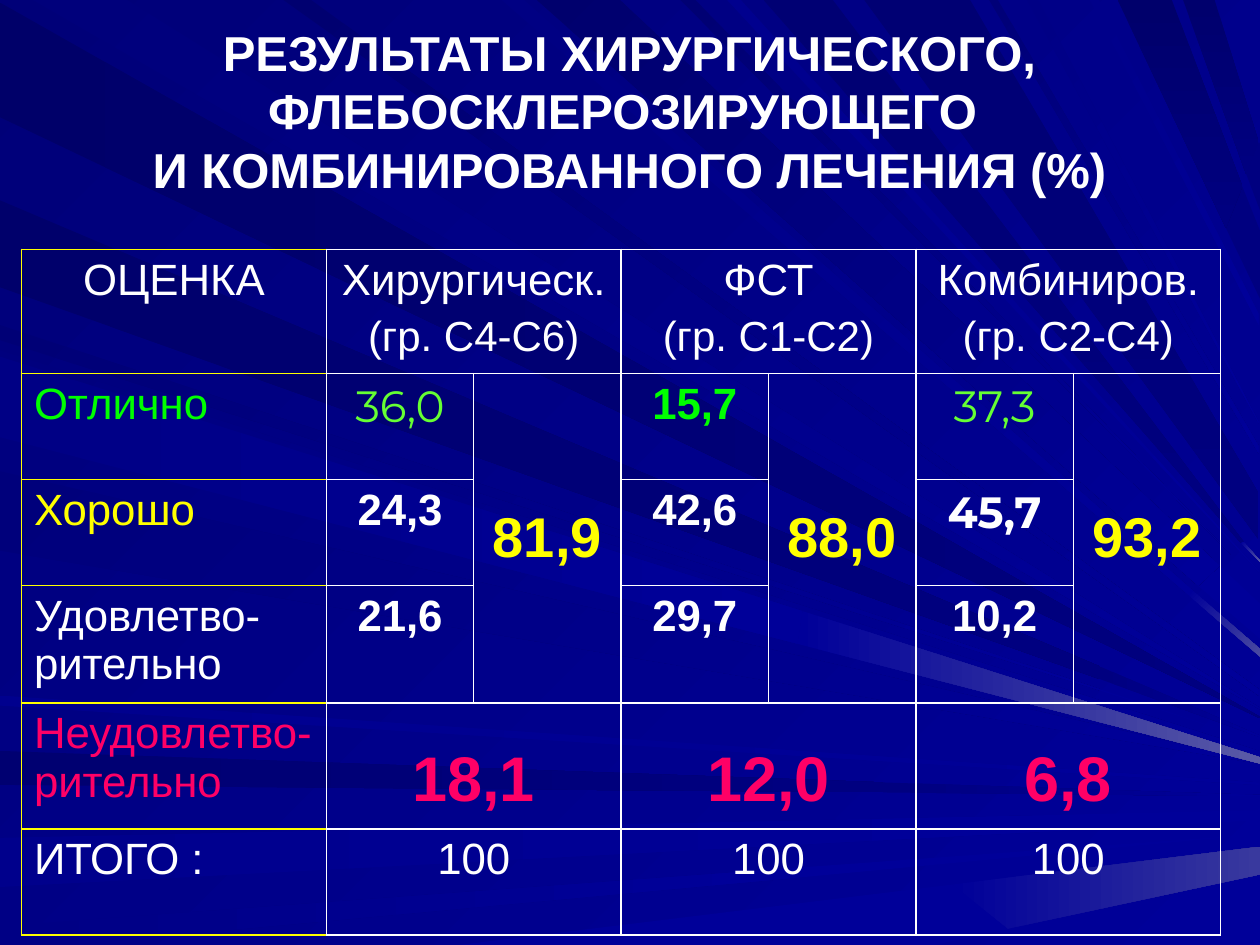
from lxml.etree import SubElement
from pptx import Presentation
from pptx.dml.color import RGBColor
from pptx.enum.text import MSO_ANCHOR, PP_ALIGN
from pptx.oxml.ns import qn
from pptx.util import Inches, Pt

WHITE = RGBColor(0xFF, 0xFF, 0xFF)
YELLOW = RGBColor(0xFF, 0xFF, 0x00)
GREEN = RGBColor(0x00, 0xFF, 0x00)
LIME = RGBColor(0x66, 0xFF, 0x33)
PINK = RGBColor(0xFF, 0x00, 0x66)
NAVY = RGBColor(0x00, 0x00, 0x78)
BLUE = RGBColor(0x00, 0x00, 0x99)

# Text formats
BASE = {"name": "Arial", "size": Pt(25), "bold": False}
BOLD = {**BASE, "bold": True}
SMALL = {**BASE, "size": Pt(24)}
THIN = {**BASE, "name": "Montserrat"}
HEAVY = {**THIN, "bold": True}
SUM = {**BOLD, "size": Pt(32)}
FAIL = {**BOLD, "size": Pt(36)}
TITLE = {**BOLD, "size": Pt(28)}

# Background rays: first colour, last colour, angle, corners in 1/100 inch
RAYS = [
    ("000069", "000080", 0, "556,317 0,2 0,93 529,345 1000,570 1000,569"),
    ("00007B", "000099", 45, "577,298 101,0 26,0 563,310 1000,563 1000,562"),
    ("000071", "000080", 0, "0,623 701,629 701,621 0,596"),
    ("000080", "000099", 0, "1000,632 1000,631 701,621 701,629"),
    ("00008C", "000099", 0, "0,704 831,660 831,647 0,665"),
    ("000099", "000099", 0, "1000,651 1000,643 831,647 831,660"),
    ("000099", "000099", 0, "1000,662 628,689 628,697"),
    ("000085", "000099", 0, "0,750 54,750 628,697 628,689 0,735"),
    ("000099", "000099", 0, "742,750 801,737 756,702 364,750"),
    ("000099", "39399E", 0, "1000,694 1000,672 756,702 800,737"),
    ("000099", "000099", 0, "1000,589 873,547 873,548"),
    ("000076", "000099", 45, "0,270 873,548 873,547 0,258"),
    ("000080", "000099", 0, "1000,585 1000,584 873,529 873,539"),
    ("00006B", "000080", 0, "0,228 873,539 873,529 0,159"),
    ("000083", "000099", 45, "398,0 944,473 947,469 416,0"),
    ("000099", "4A4AA1", 45, "1000,521 1000,515 947,469 944,473"),
    ("000099", "000099", 0, "1000,507 1000,479 968,449 951,465"),
    ("00006D", "000099", 45, "426,0 951,465 968,449 492,0"),
    ("000073", "000099", 45, "540,0 977,440 552,0"),
    ("000073", "000080", 90, "606,0 985,431 987,430 661,0"),
    ("000099", "5A5AA6", 45, "1000,446 1000,445 987,430 985,431"),
    ("000080", "000080", 0, "1000,237 1000,183 986,148 973,181"),
    ("00006B", "000080", 90, "887,0 973,181 986,148 930,0"),
    ("00006D", "000080", 90, "964,0 939,0 989,138 999,113"),
    ("000080", "000080", 0, "989,138 1000,167 1000,114 999,113"),
    ("00007E", "000099", 45, "0,342 999,602 999,596 0,278"),
    ("00007B", "000099", 45, "0,437 999,606 999,605 0,374"),
    ("00008E", "000099", 0, "0,560 999,623 999,621 0,552"),
    ("000070", "000099", 45, "225,0 999,552 999,547 247,0"),
    ("00008E", "000099", 45, "577,0 999,454 999,453 588,0"),
    ("000073", "000080", 90, "770,0 686,0 999,428 999,390 998,390"),
    ("000078", "000099", 45, "785,0 999,360 999,354 792,0"),
    ("000085", "000099", 45, "815,0 999,336 999,335 824,0"),
    ("00008A", "000099", 45, "999,249 872,0 865,0 999,258"),
    ("000085", "000099", 0, "0,283 0,347 633,511 635,498 637,485"),
    ("000099", "5A5AA6", 0, "1000,601 637,485 635,498 633,511 1000,606"),
]

COLS = [2.42, 1.17, 1.17, 1.17, 1.17, 1.25, 1.17]
ROW = 0.84
LABELS = [
    ("Отлично", GREEN),
    ("Хорошо", YELLOW),
    ("Удовлетво-рительно", WHITE),
    ("Неудовлетво-рительно", PINK),
    ("ИТОГО :", WHITE),
]
# Each group: heading, range, three grades (text, format, colour), sum, failures
GROUPS = [
    ("Хирургическ.", "(гр. С4-С6)",
     [("36,0", THIN, LIME), ("24,3", BOLD, WHITE), ("21,6", BOLD, WHITE)],
     "81,9", "18,1"),
    ("ФСТ", "(гр. С1-С2)",
     [("15,7", BOLD, GREEN), ("42,6", BOLD, WHITE), ("29,7", BOLD, WHITE)],
     "88,0", "12,0"),
    ("Комбиниров.", "(гр. С2-С4)",
     [("37,3", THIN, LIME), ("45,7", HEAVY, WHITE), ("10,2", BOLD, WHITE)],
     "93,2", "6,8"),
]


def shade(fill, first, last, angle):
    fill.gradient()
    fill.gradient_angle = -angle % 360
    for stop, color in zip(fill.gradient_stops, (first, last)):
        stop.color.rgb = color


def add_ray(slide, first, last, angle, text):
    pts = [tuple(map(int, pair.split(","))) for pair in text.split()]
    pen = slide.shapes.build_freeform(*pts[0], scale=Inches(0.01))
    pen.add_line_segments(pts[1:], close=True)
    ray = pen.convert_to_shape()
    ray.shadow.inherit = False
    ray.line.fill.background()
    if first == last:
        ray.fill.solid()
        ray.fill.fore_color.rgb = RGBColor.from_string(first)
    else:
        shade(ray.fill, RGBColor.from_string(first),
              RGBColor.from_string(last), angle)


def put(par, text, form, color, align=PP_ALIGN.CENTER):
    par.text = text
    par.alignment = align
    for run in par.runs:
        for key, value in form.items():
            setattr(run.font, key, value)
        run.font.color.rgb = color


def add_title(slide):
    box = slide.shapes.add_textbox(Inches(0.08), Inches(0.25),
                                   Inches(9.83), Inches(1.25))
    frame = box.text_frame
    frame.word_wrap = True
    frame.vertical_anchor = MSO_ANCHOR.MIDDLE
    put(frame.paragraphs[0],
        "РЕЗУЛЬТАТЫ ХИРУРГИЧЕСКОГО, ФЛЕБОСКЛЕРОЗИРУЮЩЕГО \v"
        "И КОМБИНИРОВАННОГО ЛЕЧЕНИЯ (%)", TITLE, WHITE)


def edge(cell, colors):
    props = cell._tc.get_or_add_tcPr()
    for pos, (side, color) in enumerate(colors.items()):
        line = SubElement(props, qn("a:ln" + side), w=str(Pt(1)))
        fill = SubElement(line, qn("a:solidFill"))
        SubElement(fill, qn("a:srgbClr"), val=str(color))
        props.insert(pos, line)


def add_grid(slide):
    rows = len(LABELS) + 1
    frame = slide.shapes.add_table(rows, len(COLS), Inches(0.17), Inches(1.98),
                                   Inches(sum(COLS)), Inches(rows * ROW))
    table = frame.table
    table.first_row = table.horz_banding = False
    for col, width in zip(table.columns, COLS):
        col.width = Inches(width)
    for row in table.rows:
        row.height = Inches(ROW)
        for num, cell in enumerate(row.cells):
            cell.fill.background()
            tint = WHITE if num else YELLOW
            edge(cell, {"L": tint, "R": WHITE, "T": tint, "B": tint})
    return table


def fill_grid(table):
    def first(row, col):
        return table.cell(row, col).text_frame.paragraphs[0]

    # Grade names
    put(first(0, 0), "ОЦЕНКА", BASE, WHITE)
    for row, (text, color) in enumerate(LABELS, 1):
        put(first(row, 0), text, BASE, color, PP_ALIGN.LEFT)

    # Treatment groups, two columns each
    for num, (name, span, marks, total, fail) in enumerate(GROUPS):
        col = 1 + 2 * num
        for row in (0, 4, 5):
            table.cell(row, col).merge(table.cell(row, col + 1))
        put(first(0, col), name, BASE, WHITE)
        par = table.cell(0, col).text_frame.add_paragraph()
        put(par, span, SMALL, WHITE)
        par.space_before = Pt(5)
        for row, mark in enumerate(marks, 1):
            put(first(row, col), *mark)
        good = table.cell(1, col + 1)
        good.merge(table.cell(3, col + 1))
        good.vertical_anchor = MSO_ANCHOR.MIDDLE
        put(first(1, col + 1), total, SUM, YELLOW)
        put(first(4, col), fail, FAIL, PINK)
        first(4, col).line_spacing = 1.5
        put(first(5, col), "100", BASE, WHITE)


def main():
    deck = Presentation()
    deck.slide_width, deck.slide_height = Inches(10), Inches(7.5)
    slide = deck.slides.add_slide(deck.slide_layouts[6])
    shade(slide.background.fill, NAVY, BLUE, 45)
    for ray in RAYS:
        add_ray(slide, *ray)
    add_title(slide)
    fill_grid(add_grid(slide))
    deck.save("out.pptx")


if __name__ == "__main__":
    main()
